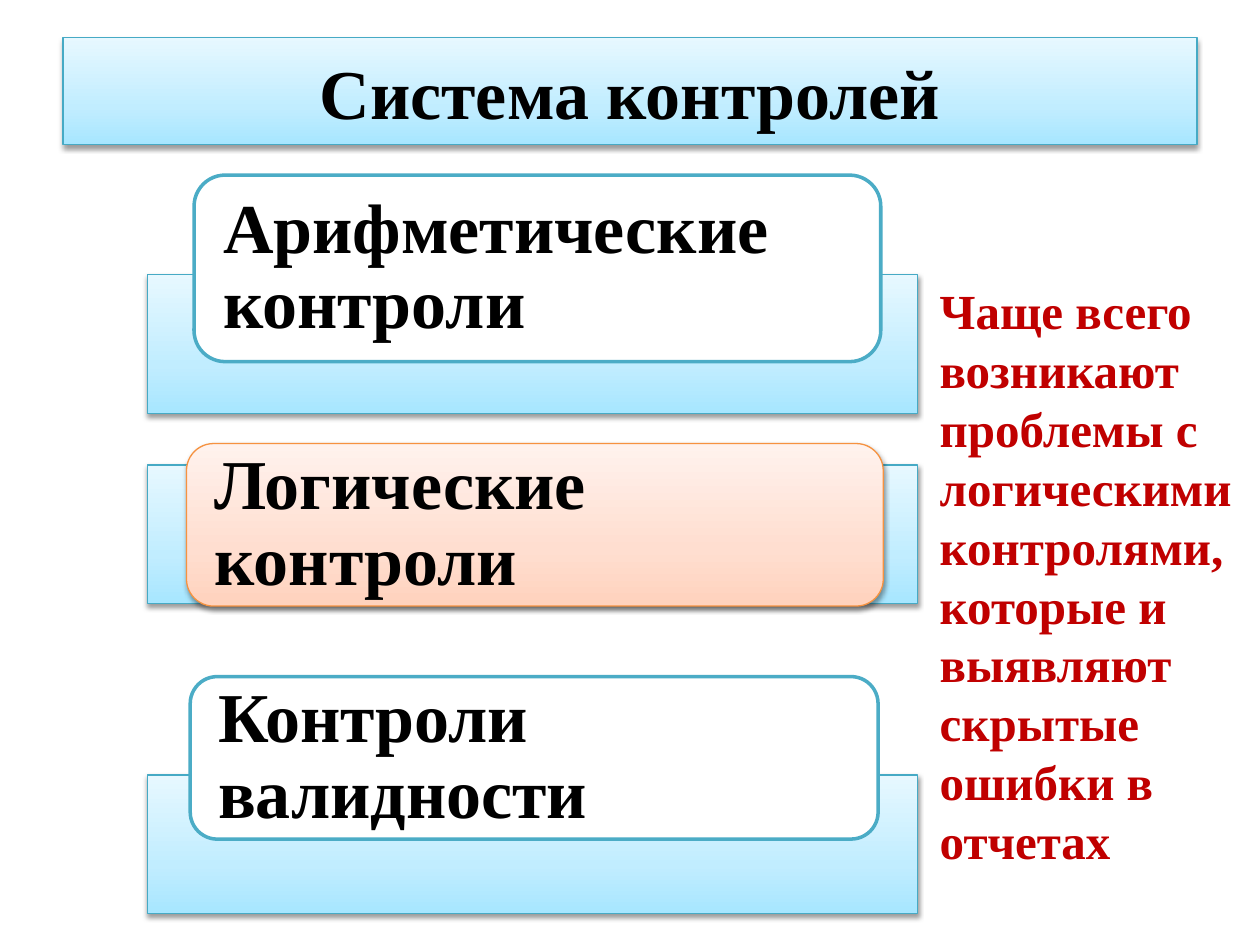
from lxml import etree
from pptx import Presentation
from pptx.dml.color import RGBColor
from pptx.enum.shapes import MSO_SHAPE
from pptx.enum.text import MSO_ANCHOR, PP_ALIGN
from pptx.oxml import parse_xml
from pptx.oxml.ns import qn
from pptx.util import Inches, Pt

RECT, ROUND = MSO_SHAPE.RECTANGLE, MSO_SHAPE.ROUNDED_RECTANGLE
MIDDLE, TOP = MSO_ANCHOR.MIDDLE, MSO_ANCHOR.TOP
LEFT, CENTER = PP_ALIGN.LEFT, PP_ALIGN.CENTER
WIDTH, HEIGHT = 10, 7.5
FONT = "Times New Roman"
DRAWING = "http://schemas.openxmlformats.org/drawingml/2006/main"

COLORS = {"text": "000000", "note": "C00000", "white": "FFFFFF",
          "blue_line": "46AAC5", "card_line": "4BACC6", "orange_line": "F69240"}
GRADIENTS = {"blue": ("A7E6FF", "C1EDFF", "E7F8FF"),
             "orange": ("FFD2BD", "FFDED0", "FFF2ED")}
STYLES = {
    "bar": {"gradient": "blue", "line": "blue_line", "width": 0.75},
    "plain": {"gradient": None, "line": "card_line", "width": 2},
    "accent": {"gradient": "orange", "line": "orange_line", "width": 0.75},
}
CONTROLS = [
    ("Арифметические контроли", 29.07, (6.06, -71.82, 89.2, 134.55), "plain"),
    ("Логические контроли", 49.2, (5.07, -15.45, 90.51, 117.27), "accent"),
    ("Контроли валидности", 82, (5.56, -70.91, 89.36, 117.27), "plain"),
]


def color(name):
    """Return the named colour."""
    return RGBColor.from_string(COLORS[name])


def inner_box(box, shares):
    """Return a box given in percent shares of another box."""
    left, top, width, height = box
    x, y, across, down = (share / 100 for share in shares)
    return left + x * width, top + y * height, across * width, down * height


def add_gradient(shape, name):
    """Fill a shape with a three-stop gradient rising from its bottom."""
    stops = "".join(f'<a:gs pos="{place}"><a:srgbClr val="{tone}"/></a:gs>'
                    for place, tone in zip((0, 35000, 100000), GRADIENTS[name]))
    shape.fill.background()
    properties = shape._element.spPr
    properties.replace(properties.find(qn("a:noFill")), parse_xml(
        f'<a:gradFill xmlns:a="{DRAWING}" rotWithShape="1"><a:gsLst>{stops}'
        '</a:gsLst><a:lin ang="16200000" scaled="0"/></a:gradFill>'))


def add_shadow(shape):
    """Add a soft shadow below a shape."""
    effects = shape._element.spPr.find(qn("a:effectLst"))
    shadow = etree.SubElement(effects, qn("a:outerShdw"), blurRad=str(Pt(3.1)),
                              dist=str(Pt(1.6)), dir="5400000", rotWithShape="0")
    tone = etree.SubElement(shadow, qn("a:srgbClr"), val=COLORS["text"])
    etree.SubElement(tone, qn("a:alpha"), val="38000")


def add_panel(page, box, kind, style):
    """Draw one outlined panel in the given style."""
    shape = page.shapes.add_shape(kind, *map(Inches, box))
    shape.shadow.inherit = False
    look = STYLES[style]
    shape.line.color.rgb = color(look["line"])
    shape.line.width = Pt(look["width"])
    if look["gradient"]:
        add_gradient(shape, look["gradient"])
        add_shadow(shape)
    else:
        shape.fill.solid()
        shape.fill.fore_color.rgb = color("white")
    return shape


def write_text(shape, text, size, tone, align, frame_format, spacing=1.0):
    """Write one bold paragraph into a shape."""
    frame = shape.text_frame
    for name, value in {"word_wrap": True, **frame_format}.items():
        setattr(frame, name, value)
    para = frame.paragraphs[0]
    para.alignment, para.line_spacing = align, spacing
    span = para.add_run()
    span.text = text
    for name, value in {"name": FONT, "size": Pt(size), "bold": True}.items():
        setattr(span.font, name, value)
    span.font.color.rgb = color(tone)


def add_title(page, box):
    """Place the title banner."""
    write_text(add_panel(page, box, RECT, "bar"), "Система контролей", 40,
               "text", CENTER, {"vertical_anchor": MIDDLE})


def add_control(page, box, text, card_shares, style):
    """Place a bar and the labelled card laid over it."""
    add_panel(page, box, RECT, "bar")
    card = add_panel(page, inner_box(box, card_shares), ROUND, style)
    write_text(card, text, 40, "text", LEFT,
               {"vertical_anchor": MIDDLE, "margin_left": Inches(0.16),
                "margin_right": Inches(0.16), "margin_top": 0, "margin_bottom": 0}, 0.9)


def add_note(page, box):
    """Place the red remark beside the controls."""
    write_text(page.shapes.add_textbox(*map(Inches, box)),
               "Чаще всего возникают проблемы с логическими контролями, "
               "которые и выявляют скрытые ошибки в отчетах",
               28, "note", LEFT, {"vertical_anchor": TOP})


def main():
    """Build and save the deck."""
    deck = Presentation()
    deck.slide_width, deck.slide_height = Inches(WIDTH), Inches(HEIGHT)
    page = deck.slides.add_slide(deck.slide_layouts[6])
    full = (0, 0, WIDTH, HEIGHT)
    add_title(page, inner_box(full, (5, 4, 90, 11.33)))
    for text, top, card_shares, style in CONTROLS:
        add_control(page, inner_box(full, (11.7, top, 61.1, 14.67)),
                    text, card_shares, style)
    add_note(page, inner_box(full, (73.6, 29.07, 26.3, 64.13)))
    deck.save("out.pptx")


if __name__ == "__main__":
    main()
